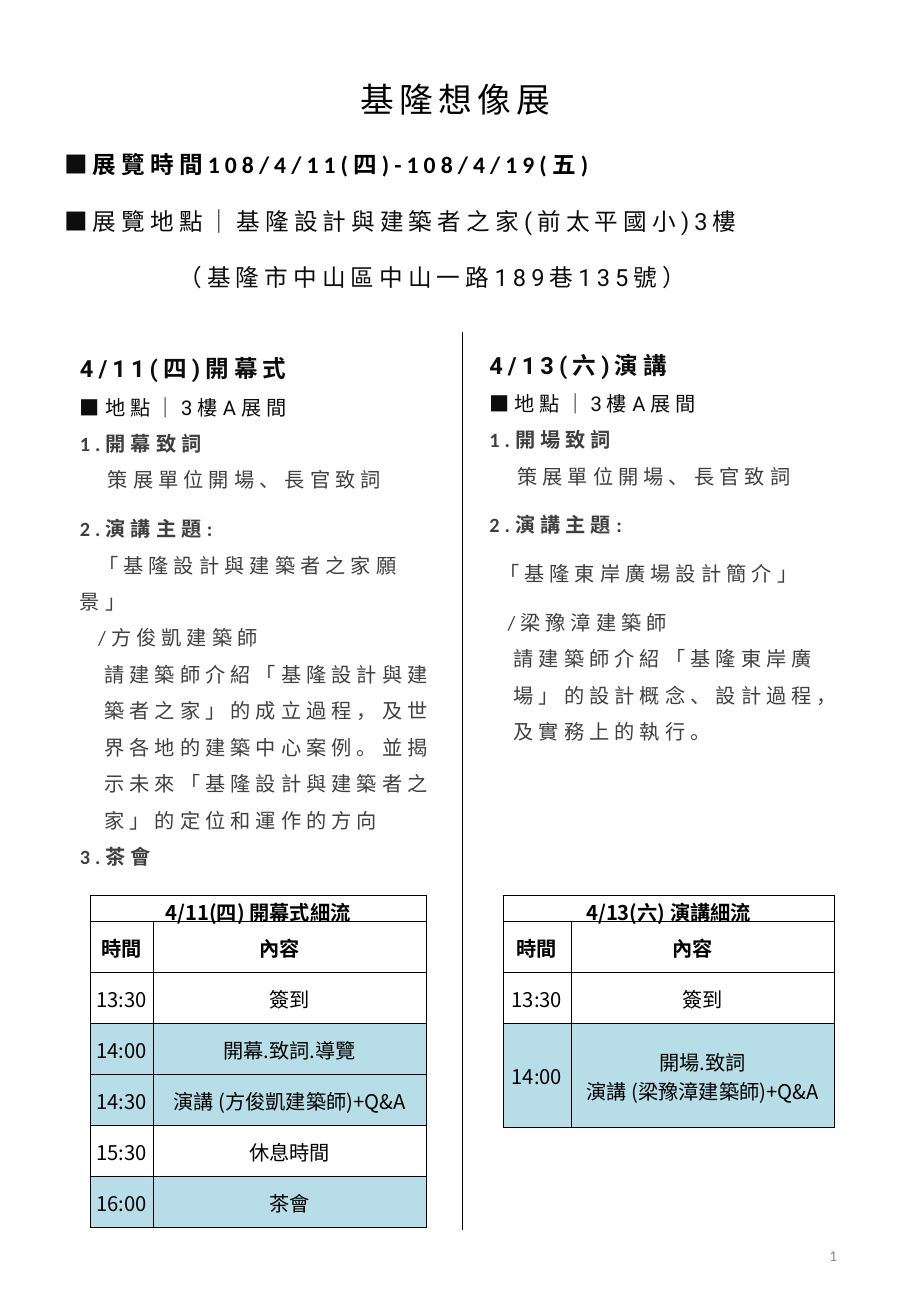
from lxml import etree
from pptx import Presentation
from pptx.dml.color import RGBColor
from pptx.enum.shapes import MSO_CONNECTOR
from pptx.enum.text import MSO_ANCHOR as Anchor, MSO_AUTO_SIZE as AutoSize, PP_ALIGN as Align
from pptx.oxml.ns import qn
from pptx.util import Inches, Pt

BLACK = RGBColor(0x00, 0x00, 0x00)
INK = RGBColor(0x0D, 0x0D, 0x0D)
DARK_GRAY = RGBColor(0x40, 0x40, 0x40)
PAGE_GRAY = RGBColor(0x8C, 0x8C, 0x8C)
HIGHLIGHT = RGBColor(0xB7, 0xDE, 0xE8)

TITLE = (20, "Calibri", BLACK, False, 300)
DATES = (14, "Calibri", BLACK, True, 300)
PLACE = (14, "Roboto", INK, False, 300)
HEADING = (14, "Roboto", INK, True, 300)
VENUE = (12, "Roboto", INK, False, 300)
ITEM = (12, "Calibri", DARK_GRAY, True, 300)
BODY = (12, "Calibri", DARK_GRAY, False, 300)
PAGE_NUMBER = (9, "Calibri", PAGE_GRAY, False, 0)
CELL = (12, "Noto Sans CJK SC", BLACK, False, 0)
CELL_HEAD = (12, "Noto Sans CJK SC", BLACK, True, 0)


def style_run(run, style):
    size, typeface, color, bold, spacing = style
    run.font.size = Pt(size)
    run.font.bold = bold
    run.font.color.rgb = color
    run.font.name = typeface
    properties = run._r.get_or_add_rPr()
    properties.set("spc", str(spacing))
    etree.SubElement(properties, qn("a:ea"), typeface=typeface)


def fill_text(text_frame, lines):
    text_frame.word_wrap = True
    text_frame.text = "\n".join("".join(text for text, style in parts) for parts, *layout in lines)
    for paragraph, (parts, spacing, left, first) in zip(text_frame.paragraphs, lines):
        properties = paragraph._p.get_or_add_pPr()
        properties.set("marL", str(Inches(left)))
        properties.set("indent", str(Inches(first)))
        paragraph.line_spacing = spacing
        paragraph.runs[0].text = parts[0][0]
        for text, style in parts[1:]:
            paragraph.add_run().text = text
        for run, (text, style) in zip(paragraph.runs, parts):
            style_run(run, style)


presentation = Presentation()
presentation.slide_width = Inches(7.5)
presentation.slide_height = Inches(10.83)
slide = presentation.slides.add_slide(presentation.slide_layouts[5])

title = slide.shapes.title
title.left, title.top, title.width, title.height = Inches(0), Inches(0.1), Inches(7.5), Inches(0.95)
title.text_frame.auto_size = AutoSize.NONE
title.text_frame.vertical_anchor = Anchor.TOP
fill_text(title.text_frame, [([("基隆想像展", TITLE)], 2.5, 0, 0)])
title.text_frame.paragraphs[0].alignment = Align.CENTER

text_boxes = [
    (0, 0.95, 7.5, 1.51, [
        ([("■", PLACE), ("展覽時間108/4/11(四)-108/4/19(五)", DATES)], 2, 0.43, 0),
        ([("■展覽地點｜基隆設計與建築者之家(前太平國小)3樓", PLACE)], 2, 0.43, 0),
        ([("（基隆市中山區中山一路189巷135號）", PLACE)], 2, 1.37, 0),
    ]),
    (0.56, 2.75, 3.2, 4.19, [
        ([("4/11(四)開幕式", HEADING)], 1.5, 0, 0),
        ([("■地點｜3樓A展間", VENUE)], 1.5, 0, 0),
        ([("1.開幕致詞", ITEM)], 1.5, 0, 0),
        ([("策展單位開場、長官致詞", BODY)], 1.5, 0.23, 0),
        ([("2.演講主題:", ITEM)], 2, 0, 0),
        ([("「基隆設計與建築者之家願景」", BODY)], 1.5, 0, 0.15),
        ([("/方俊凱建築師", BODY)], 1.5, 0.15, 0),
        ([("請建築師介紹「基隆設計與建築者之家」的成立過程，及世界各地的建築中心案例。"
           "並揭示未來「基隆設計與建築者之家」的定位和運作的方向", BODY)], 1.5, 0.2, 0),
        ([("3.茶會", ITEM)], 1.5, 0, 0),
    ]),
    (3.93, 2.72, 3.05, 3.79, [
        ([("4/13(六)演講", HEADING)], 1.5, 0, 0),
        ([("■地點｜3樓A展間", VENUE)], 1.5, 0, 0),
        ([("1.開場致詞", ITEM)], 1.5, 0, 0),
        ([("策展單位開場、長官致詞", BODY)], 1.5, 0.23, 0),
        ([("2.演講主題:", ITEM)], 2, 0, 0),
        ([("「基隆東岸廣場設計簡介」", BODY)], 2, 0.08, 0),
        ([("/梁豫漳建築師", BODY)], 2, 0.15, 0),
        ([("請建築師介紹「基隆東岸廣場」的設計概念、設計過程，及實務上的執行。", BODY)], 1.5, 0.2, 0),
    ]),
]
for left, top, width, height, lines in text_boxes:
    text_box = slide.shapes.add_textbox(Inches(left), Inches(top), Inches(width), Inches(height))
    fill_text(text_box.text_frame, lines)

page_number = slide.shapes.add_textbox(Inches(5.3), Inches(10.04), Inches(1.69), Inches(0.58))
page_number.text_frame.vertical_anchor = Anchor.MIDDLE
fill_text(page_number.text_frame, [([("1", PAGE_NUMBER)], 1, 0, 0)])
page_number.text_frame.paragraphs[0].alignment = Align.RIGHT

schedules = [
    (0.74, (0.52, 2.25), "4/11(四) 開幕式細流", [
        ("13:30", "簽到", False, 0.42),
        ("14:00", "開幕.致詞.導覽", True, 0.42),
        ("14:30", "演講 (方俊凱建築師)+Q&A", True, 0.42),
        ("15:30", "休息時間", False, 0.42),
        ("16:00", "茶會", True, 0.42),
    ]),
    (4.14, (0.56, 2.17), "4/13(六) 演講細流", [
        ("13:30", "簽到", False, 0.42),
        ("14:00", "開場.致詞\n演講 (梁豫漳建築師)+Q&A", True, 0.86),
    ]),
]
for left, column_widths, caption, sessions in schedules:
    rows = [(caption, "", False, 0.21), ("時間", "內容\u3000".replace("\u3000", "　"), False, 0.42), *sessions]
    height = sum(row[3] for row in rows)
    table = slide.shapes.add_table(
        len(rows), 2, Inches(left), Inches(7.37), Inches(sum(column_widths)), Inches(height)).table
    table.first_row = table.horz_banding = False
    for column, width in zip(table.columns, column_widths):
        column.width = Inches(width)
    table.cell(0, 0).merge(table.cell(0, 1))
    for row_index, (time, content, highlighted, row_height) in enumerate(rows):
        table.rows[row_index].height = Inches(row_height)
        for column_index, text in enumerate((time, content)):
            cell = table.cell(row_index, column_index)
            cell.margin_left = cell.margin_right = cell.margin_top = Inches(0.01)
            cell.margin_bottom = Inches(0)
            cell.vertical_anchor = Anchor.MIDDLE
            properties = cell._tc.get_or_add_tcPr()
            for side in ("a:lnL", "a:lnR", "a:lnT", "a:lnB"):
                border = etree.SubElement(properties, qn(side), w=str(Pt(0.5)))
                border_fill = etree.SubElement(border, qn("a:solidFill"))
                etree.SubElement(border_fill, qn("a:srgbClr"), val=str(BLACK))
            if highlighted:
                cell.fill.solid()
                cell.fill.fore_color.rgb = HIGHLIGHT
            else:
                cell.fill.background()
            cell.text_frame.text = text
            for paragraph in cell.text_frame.paragraphs:
                paragraph.alignment = Align.CENTER
                for run in paragraph.runs:
                    style_run(run, CELL_HEAD if row_index < 2 else CELL)
                if not text:
                    etree.SubElement(paragraph._p, qn("a:endParaRPr"), sz="1200")

divider = slide.shapes.add_connector(
    MSO_CONNECTOR.STRAIGHT, Inches(3.81), Inches(2.73), Inches(3.81), Inches(10.12))
divider.line.color.rgb = BLACK
divider.line.width = Pt(0.5)
etree.SubElement(divider._element.spPr, qn("a:effectLst"))

presentation.save("out.pptx")
